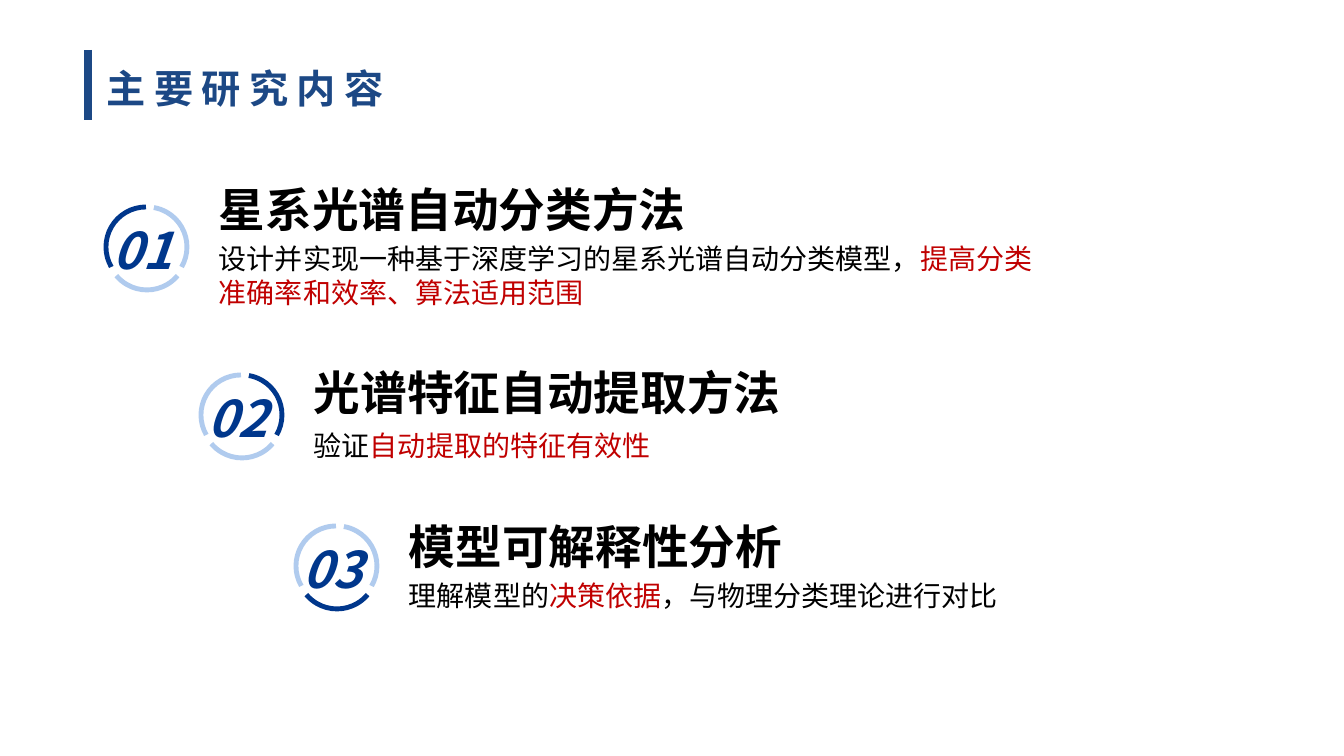
import pptx
import pptx.util
import pptx.dml.color
import pptx.enum.shapes
import pptx.enum.text
import pptx.oxml.ns
import lxml.etree

RGBColor = pptx.dml.color.RGBColor
TITLE_BLUE = RGBColor(0x1C, 0x48, 0x85)
NAVY = RGBColor(0x00, 0x37, 0x8C)
PALE = RGBColor(0xB0, 0xCB, 0xEE)
BLACK = RGBColor(0x00, 0x00, 0x00)
RED = RGBColor(0xC0, 0x00, 0x00)

ANCHOR = pptx.enum.text.MSO_ANCHOR
ALIGN = pptx.enum.text.PP_ALIGN
qn = pptx.oxml.ns.qn


def px(n):
    return pptx.util.Emu(round(n * 914400 / 100.8))


class Deck:
    font = "Noto Sans CJK SC"
    line_height = 1.215
    inset = 5

    def __init__(self):
        self.prs = pptx.Presentation()
        self.prs.slide_width = px(1344)
        self.prs.slide_height = px(756)
        self.s = self.prs.slides.add_slide(self.prs.slide_layouts[6])

    def group(self):
        return self.s.shapes.add_group_shape().shapes

    def text(self, shapes, box, runs, size, bold=False, italic=False,
             anchor=ANCHOR.TOP, align=ALIGN.LEFT, spacing=0):
        sp = shapes.add_textbox(*map(px, box))
        tf = sp.text_frame
        tf.word_wrap = True
        tf.vertical_anchor = anchor
        shift = round(size * 0.12)
        tf.margin_top = px(self.inset + shift)
        tf.margin_bottom = px(self.inset - shift)
        p = tf.paragraphs[0]
        p.alignment = align
        p.line_spacing = pptx.util.Pt(round(size * self.line_height, 1))
        for words, color in runs:
            r = p.add_run()
            r.text = words
            r.font.name = self.font
            r.font.size = pptx.util.Pt(size)
            r.font.bold = bold
            r.font.italic = italic
            r.font.color.rgb = color
            rPr = r.font._element
            lxml.etree.SubElement(rPr, qn("a:ea")).set("typeface", self.font)
            if spacing:
                rPr.set("spc", str(spacing * 100))

    def line(self, x1, y1, x2, y2, color, width):
        c = self.s.shapes.add_connector(
            pptx.enum.shapes.MSO_CONNECTOR.STRAIGHT, *map(px, (x1, y1, x2, y2)))
        c.line.color.rgb = color
        c.line.width = pptx.util.Pt(width)
        lxml.etree.SubElement(c._element.spPr, qn("a:effectLst"))

    def arc(self, shapes, x, y, size, start, end, color):
        sp = shapes.add_shape(pptx.enum.shapes.MSO_SHAPE.ARC,
                              px(x), px(y), px(size), px(size))
        sp.shadow.inherit = False
        sp.adjustments[0] = start * 0.6
        sp.adjustments[1] = end * 0.6
        sp.fill.background()
        sp.line.color.rgb = color
        sp.line.width = pptx.util.Pt(3.5)

    def badge(self, shapes, x, y, index):
        self.text(shapes, (x, y, 104, 80), [(f"{index + 1:02}", NAVY)], 36,
                  bold=True, italic=True, anchor=ANCHOR.BOTTOM, align=ALIGN.CENTER)
        arcs = [(16, 6, 150, 270), (17, 6, 280, 30), (17, 9, 40, 140)]
        for i, (dx, dy, start, end) in enumerate(arcs):
            color = NAVY if i == index else PALE
            self.arc(shapes, x + dx, y + dy, 80, start, end, color)


TOPICS = [
    (201, 178, "星系光谱自动分类方法", (234, 839, 78),
     [("设计并实现一种基于深度学习的星系光谱自动分类模型，", BLACK),
      ("提高分类准确率和效率、算法适用范围", RED)]),
    (369, 361, "光谱特征自动提取方法", (421, 953, 44),
     [("验证", BLACK), ("自动提取的特征有效性", RED)]),
    (520, 515, "模型可解释性分析", (571, 882, 44),
     [("理解模型的", BLACK), ("决策依据", RED),
      ("，与物理分类理论进行对比", BLACK)]),
]


def main():
    deck = Deck()
    deck.line(88, 50, 88, 120, TITLE_BLUE, 6)
    deck.text(deck.s.shapes, (97, 56, 746, 57), [("主要研究内容", TITLE_BLUE)],
              28, bold=True, spacing=6)
    for i, (badge_y, heading_y, heading, (y, w, h), detail) in enumerate(TOPICS):
        indent = 95 * i
        shapes = deck.group()
        deck.badge(shapes, 90 + indent, badge_y, i)
        deck.text(shapes, (209 + indent, heading_y, 492, 60), [(heading, BLACK)],
                  33.3, bold=True, anchor=ANCHOR.BOTTOM)
        deck.text(shapes, (209 + indent, y, w, h), detail, 20)
    deck.prs.save("out.pptx")


if __name__ == "__main__":
    main()
